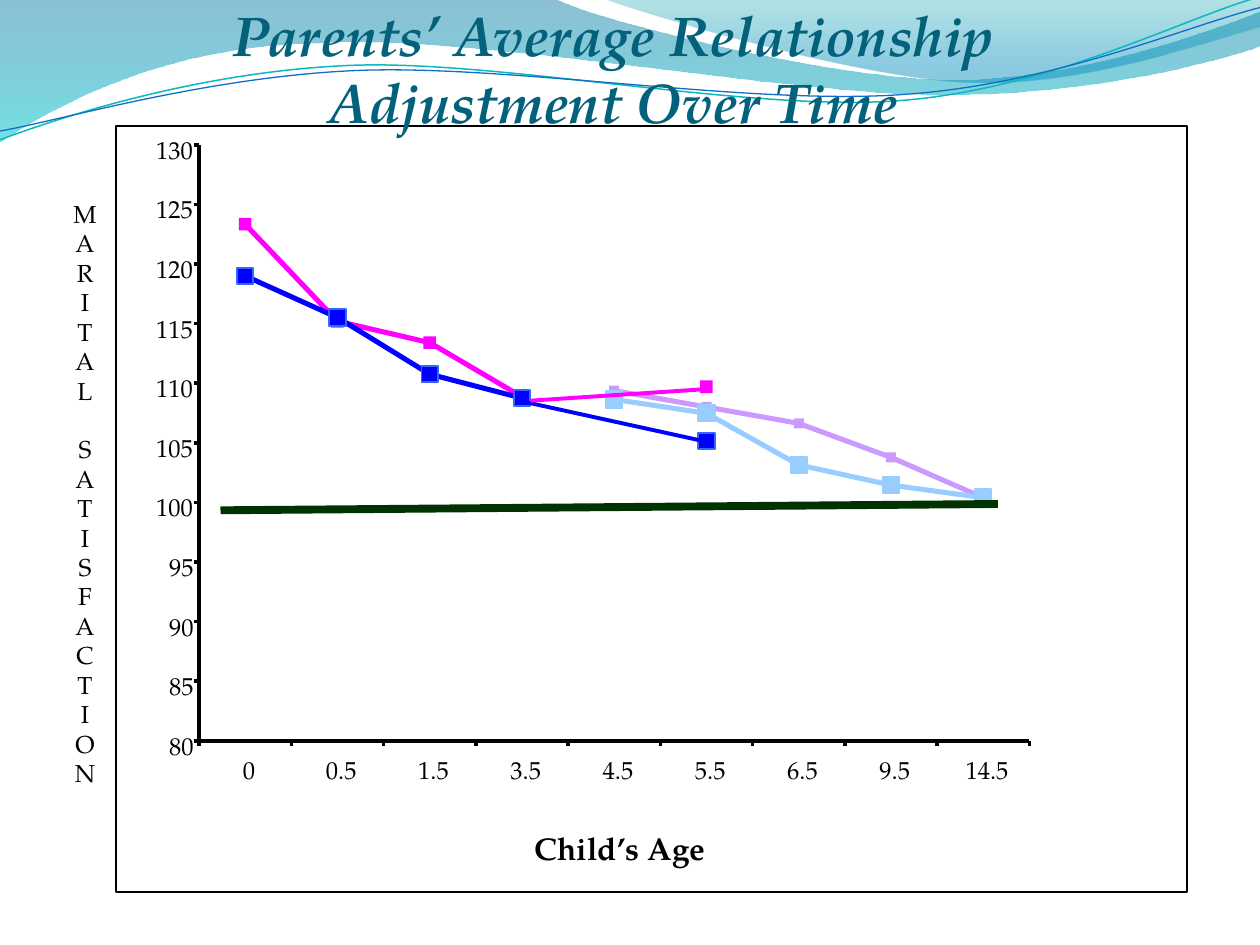
from dataclasses import dataclass
from typing import Optional

from lxml import etree
from pptx import Presentation
from pptx import util as u
from pptx.dml.color import RGBColor
from pptx.enum import shapes, text
from pptx.oxml.ns import qn

FONT = "TeX Gyre Pagella"
FRAME = (0.92, 1, 8.5, 6.08)
LEFT, TOP, RIGHT, BOTTOM = 1.58, 1.15, 8.17, 5.88  # plot area
SCORES = range(80, 131, 5)
AGES = ("0", "0.5", "1.5", "3.5", "4.5", "5.5", "6.5", "9.5", "14.5")
SCORE_STEP = (BOTTOM - TOP) / (len(SCORES) - 1)
AGE_STEP = (RIGHT - LEFT) / len(AGES)
TICK = 0.04
DIGIT = 0.11  # width of one digit of a label
DIRECTIONS = {"nw": (-1, -1), "se": (1, 1), "sw": (-1, 1), "ne": (1, -1),
              "n": (0, -1), "s": (0, 1)}
STAR = "nw se sw ne n s"


@dataclass
class Wave:
    """Start point, then cubic curves or straight lines, in inches."""
    start: tuple
    segments: list
    stops: tuple = ()  # (position, colour, opacity in percent)
    line: Optional[tuple] = None  # (colour, points)


@dataclass
class Trend:
    color: str
    first_age: int
    heights: tuple  # of the joined points
    size: float  # of a marker
    edge: Optional[str] = None
    spokes: tuple = ()  # directions of the strokes in each marker
    reach: float = 0
    late: Optional[float] = None  # height of the lone marker at 5.5


WAVES = [
    Wave((0, 0), [
        (4.4, -0.01), (4.76, 0.17, 6.64, 0.63, 7.58, 0.63),
        (8.53, 0.63, 9.58, 0.26, 10, 0.09), (10.01, 0.36),
        (9.83, 0.44, 8.7, 0.76, 7.46, 0.75), (6.22, 0.75, 3.82, 0.28, 2.57, 0.34),
        (1.29, 0.36, 0.46, 0.83, -0.01, 1.13), (0, 0)],
        stops=((0, "0074A1", 45), (1, "00C6CF", 55))),
    Wave((4.79, -0.01), [
        (5.09, 0.11, 6.82, 0.62, 7.69, 0.65), (8.56, 0.69, 9.61, 0.32, 10, 0.21),
        (10, 0), (4.79, -0.01)],
        stops=((0, "00A1A9", 30), (0.8, "008BBF", 45))),
    Wave((0, 1.11), [
        (0.48, 0.93, 1.58, 0.57, 2.77, 0.52), (3.95, 0.47, 5.93, 0.89, 7.13, 0.8),
        (8.33, 0.71, 9.38, 0.15, 9.98, -0.02)], line=("0AB8BF", 0.85)),
    Wave((0, 1.04), [
        (0.47, 0.96, 1.64, 0.61, 2.83, 0.56), (4.03, 0.51, 5.97, 0.84, 7.17, 0.75),
        (8.36, 0.67, 9.41, 0.21, 10, 0.06)], line=("0F6FC6", 0.75)),
]

TRENDS = [
    Trend("FF00FF", 0, (1.78, 2.55, 2.72, 3.15), 0.1, reach=0.04, late=3.07,
          spokes=(STAR, "se sw s", STAR, "nw sw ne n", STAR)),
    Trend("0000FF", 0, (2.19, 2.52, 2.97, 3.16), 0.13, "3366FF", late=3.5),
    Trend("CC99FF", 4, (3.1, 3.23, 3.36, 3.63, 3.95), 0.08, reach=0.03,
          spokes=(STAR, "nw ne n", STAR, STAR)),
    Trend("99CCFF", 4, (3.17, 3.28, 3.69, 3.85, 3.95), 0.13, "99CCFF"),
]
LATE_LINES = [((4.12, 3.18, 5.58, 3.5), "0000FF", 2.25),
              ((4.21, 3.18, 5.58, 3.09), "FF00FF", 2.25),
              ((1.75, 4.05, 7.92, 4), "003300", 4.5)]


def rgb(color: str) -> RGBColor:
    return RGBColor.from_string(color)


def inches(*lengths: float) -> list:
    return [u.Inches(length) for length in lengths]


def set_line(line, color: str, points: float) -> None:
    line.color.rgb = rgb(color)
    line.width = u.Pt(points)


def age_x(index: int) -> float:
    return LEFT + (index + 0.5) * AGE_STEP


def draw_line(slide, ends: tuple, color: str = "000000", points: float = 0) -> None:
    line = slide.shapes.add_connector(shapes.MSO_CONNECTOR.STRAIGHT, *inches(*ends))
    set_line(line.line, color, points)
    etree.SubElement(line._element.spPr, qn("a:effectLst"))


def draw_outline(slide, points: list):
    """A freeform through points given in thousandths of an inch."""
    builder = slide.shapes.build_freeform(*points[0], scale=u.Inches(1) / 1000)
    builder.add_line_segments(points[1:], close=False)
    shape = builder.convert_to_shape()
    shape.shadow.inherit = False
    shape.fill.background()
    return shape


def thousandths(x: float, y: float) -> tuple:
    return round(1000 * x), round(1000 * y)


def draw_wave(slide, wave: Wave) -> None:
    ends = [thousandths(*wave.start)] + [thousandths(*s[-2:]) for s in wave.segments]
    shape = draw_outline(slide, ends)
    left, top = (min(values) for values in zip(*ends))
    path = next(shape._element.iter(qn("a:path")))
    for node, segment in zip(path.findall(qn("a:lnTo")), wave.segments):
        if len(segment) == 2:
            continue
        node.tag = qn("a:cubicBezTo")
        for old in list(node):
            node.remove(old)
        for pair in (segment[:2], segment[2:4], segment[4:]):
            x, y = thousandths(*pair)
            etree.SubElement(node, qn("a:pt"), x=str(x - left), y=str(y - top))
    if wave.line:
        set_line(shape.line, *wave.line)
        return
    etree.SubElement(path, qn("a:close"))
    shape.line.fill.background()
    shape.fill.gradient()
    shape.fill.gradient_angle = 270
    for stop, (position, color, _) in zip(shape.fill.gradient_stops, wave.stops):
        stop.position = position
        stop.color.rgb = rgb(color)
    colors = shape._element.spPr.iter(qn("a:srgbClr"))
    for node, (_, _, opacity) in zip(colors, wave.stops):
        etree.SubElement(node, qn("a:alpha"), val=str(opacity * 1000))


def draw_box(slide, place: tuple, fill: Optional[str], edge: Optional[str]) -> None:
    box = slide.shapes.add_shape(shapes.MSO_SHAPE.RECTANGLE, *inches(*place))
    box.shadow.inherit = False
    if fill:
        box.fill.solid()
        box.fill.fore_color.rgb = rgb(fill)
    else:
        box.fill.background()
    if edge:
        set_line(box.line, edge, 1.13)
    else:
        box.line.fill.background()


def draw_axes(slide) -> None:
    draw_line(slide, (LEFT, TOP, LEFT, BOTTOM))
    for index in range(len(SCORES)):
        y = BOTTOM - index * SCORE_STEP
        draw_line(slide, (LEFT - TICK, y, LEFT, y))
    draw_line(slide, (LEFT, BOTTOM, RIGHT, BOTTOM))
    for index in range(len(AGES) + 1):
        x = LEFT + index * AGE_STEP
        draw_line(slide, (x, BOTTOM + TICK, x, BOTTOM))


def draw_trend(slide, trend: Trend) -> None:
    points = [thousandths(age_x(trend.first_age + i), y)
              for i, y in enumerate(trend.heights)]
    set_line(draw_outline(slide, points).line, trend.color, 2.88)


def draw_markers(slide, trend: Trend) -> None:
    centers = [(age_x(trend.first_age + i), y) for i, y in enumerate(trend.heights)]
    if trend.late:
        centers.append((age_x(5), trend.late))
    spokes = trend.spokes or ("",) * len(centers)
    for (x, y), names in zip(centers, spokes):
        half = trend.size / 2
        draw_box(slide, (x - half, y - half, trend.size, trend.size),
                 trend.color, trend.edge)
        for name in names.split():
            dx, dy = DIRECTIONS[name]
            end = (x + dx * trend.reach, y + dy * trend.reach)
            draw_line(slide, (x, y, *end), trend.color, 1.13)


def format_frame(frame, **values) -> None:
    margins = dict.fromkeys(
        ("margin_left", "margin_top", "margin_right", "margin_bottom"), 0)
    for key, value in {**margins, "word_wrap": True, **values}.items():
        setattr(frame, key, value)


def write(paragraph, words: str, size: float, color: str = "000000", **styles) -> None:
    paragraph.alignment = text.PP_ALIGN.CENTER
    run = paragraph.add_run()
    run.text = words
    run.font.color.rgb = rgb(color)
    for key, value in {"name": FONT, "size": u.Pt(size), **styles}.items():
        setattr(run.font, key, value)


def draw_label(slide, place: tuple, words: str, size: float = 14, **styles) -> None:
    frame = slide.shapes.add_textbox(*inches(*place)).text_frame
    format_frame(frame, word_wrap=False)
    write(frame.paragraphs[0], words, size, **styles)


def draw_title(slide) -> None:
    title = slide.shapes.title
    title.left, title.top, title.width, title.height = inches(1.58, 0, 6.58, 1.07)
    format_frame(title.text_frame, vertical_anchor=text.MSO_ANCHOR.MIDDLE,
                 auto_size=text.MSO_AUTO_SIZE.NONE)
    write(title.text_frame.paragraphs[0],
          "Parents’ Average Relationship Adjustment Over Time",
          32, "04617B", bold=True, italic=True)
    slide.shapes._spTree.append(title._element)  # in front of the waves


def draw_labels(slide) -> None:
    for index, score in enumerate(SCORES):
        width = DIGIT * len(str(score))
        y = BOTTOM - index * SCORE_STEP - 0.08
        draw_label(slide, (1.55 - width, y, width, 0.23), str(score))
    for index, age in enumerate(AGES):
        width = DIGIT * (len(age) - age.count(".") / 2)
        x = age_x(index) + 0.03 - width / 2
        draw_label(slide, (x, 5.99, width, 0.23), age)
    draw_label(slide, (4.23, 6.58, 1.38, 0.3), "Child’s Age", 18, bold=True)


def draw_score_caption(slide) -> None:
    """Upright letters, one below the other, beside the score axis."""
    frame = slide.shapes.add_textbox(*inches(0.51, 1.58, 0.33, 4.65)).text_frame
    format_frame(frame)
    paragraph = frame.paragraphs[0]
    for word in ("MARITAL", "SATISFACTION"):
        for place, letter in enumerate(word):
            if paragraph.runs:
                paragraph = frame.add_paragraph()
                paragraph.space_before = u.Pt(0 if place else 16.8)
            write(paragraph, letter, 14)


def main() -> None:
    deck = Presentation()
    deck.slide_width, deck.slide_height = inches(10, 7.5)
    slide = deck.slides.add_slide(deck.slide_layouts[5])
    for wave in WAVES:
        draw_wave(slide, wave)
    draw_box(slide, FRAME, None, "000000")
    draw_axes(slide)
    for trend in TRENDS:
        draw_trend(slide, trend)
    for trend in TRENDS:
        draw_markers(slide, trend)
    draw_title(slide)
    draw_labels(slide)
    for ends, color, points in LATE_LINES:
        draw_line(slide, ends, color, points)
    draw_score_caption(slide)
    deck.save("out.pptx")


if __name__ == "__main__":
    main()
